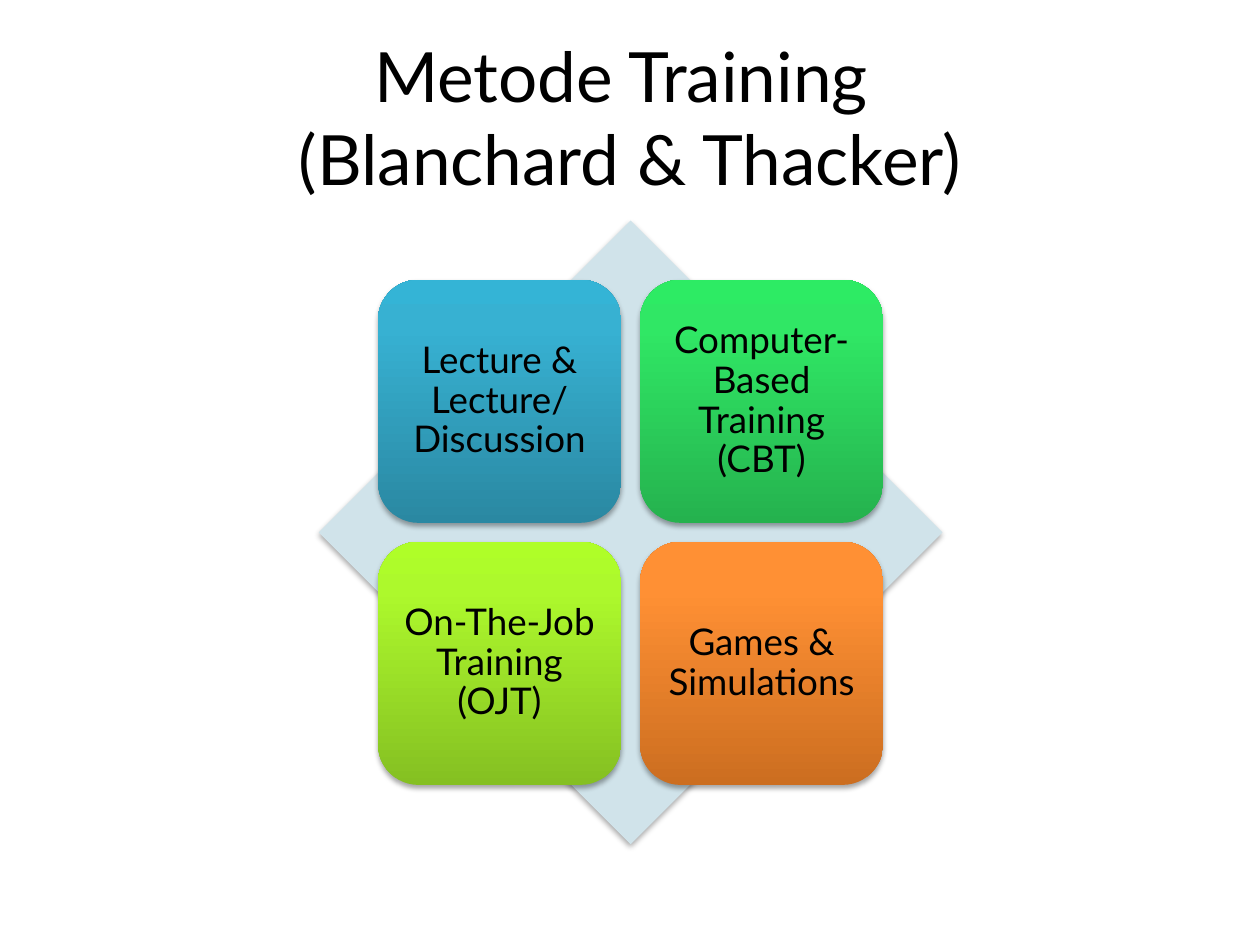
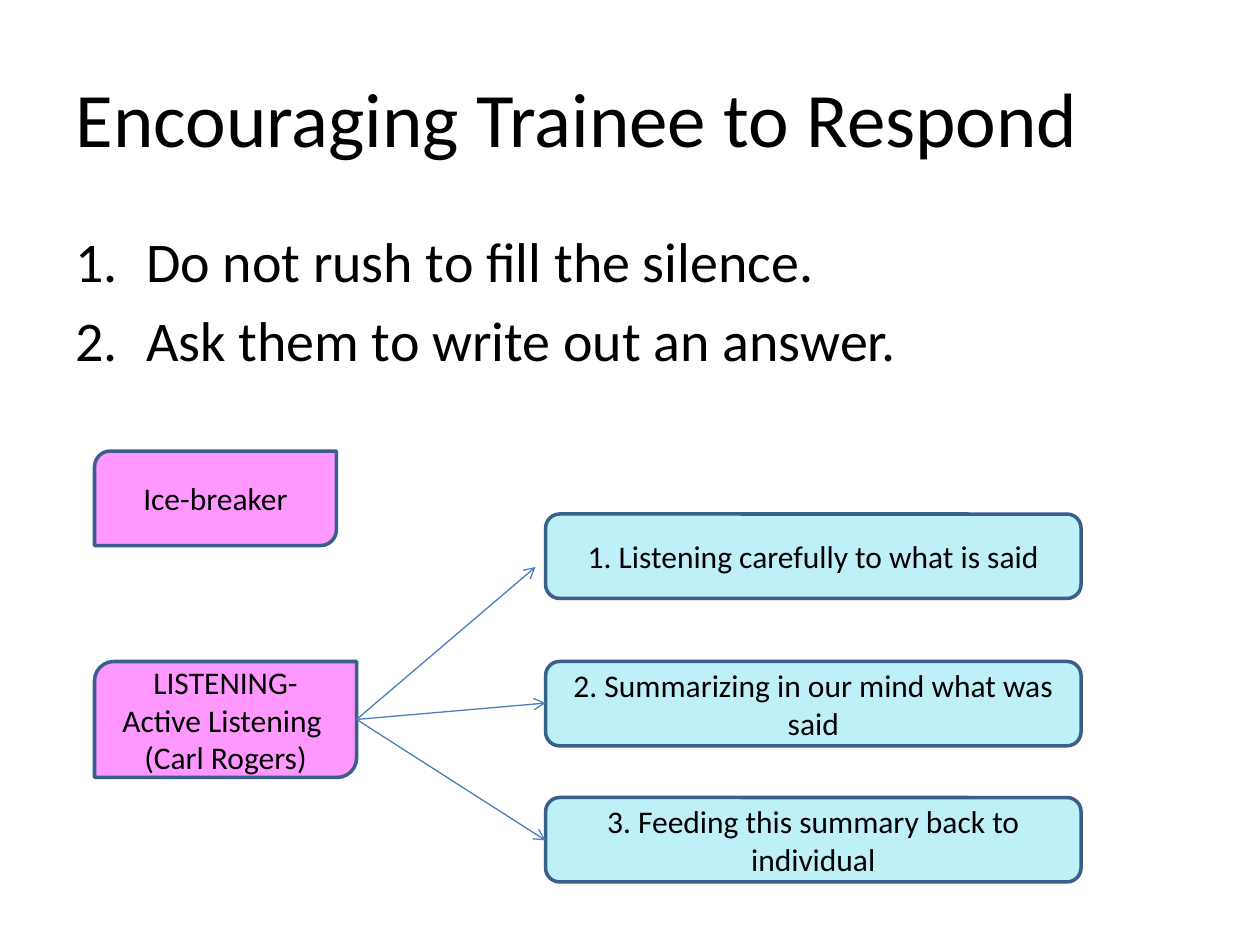
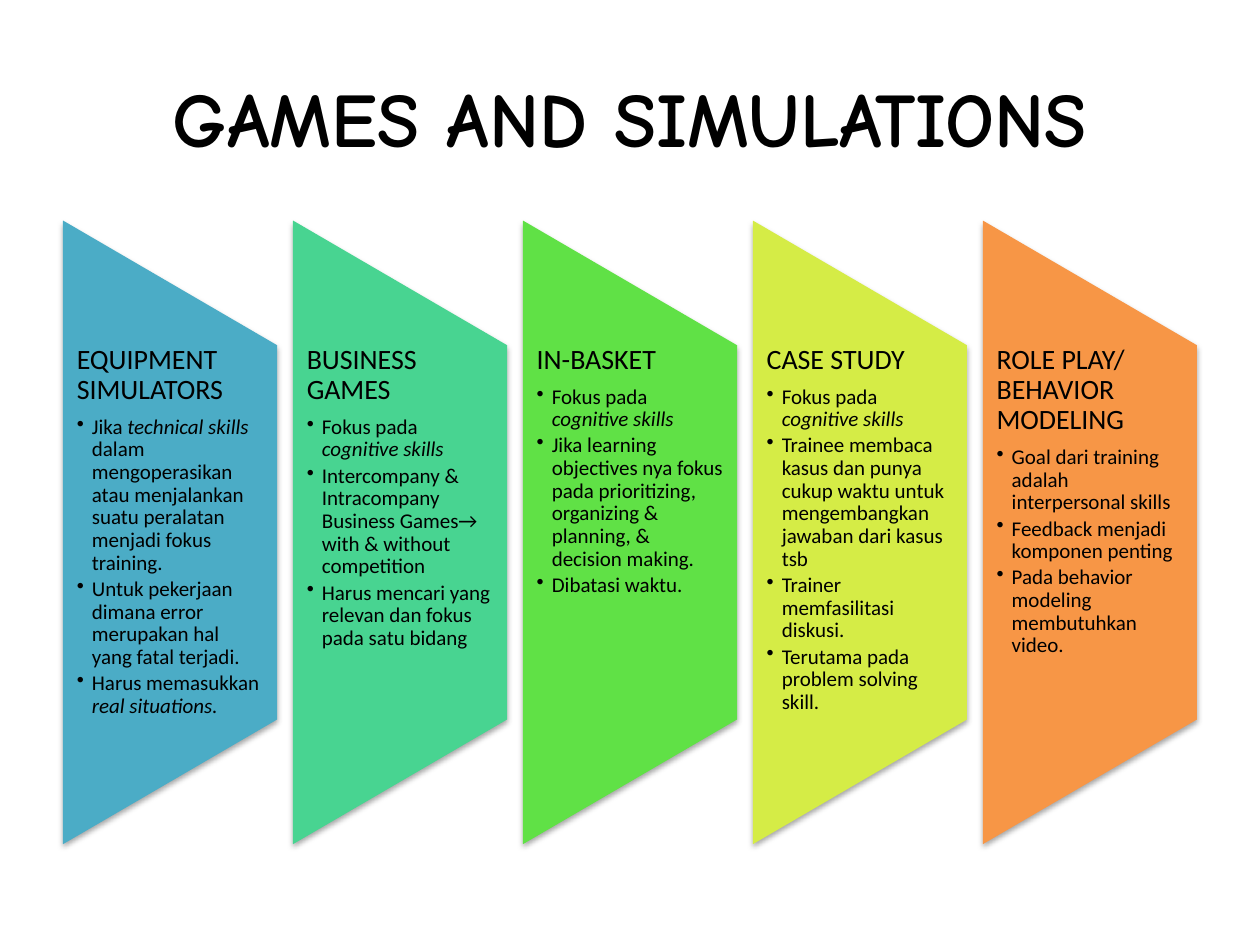
import pptx
import pptx.dml.color
import pptx.enum.shapes
import pptx.enum.text
import pptx.oxml
import pptx.oxml.ns
import pptx.util
from copy import deepcopy

Inches = pptx.util.Inches
Pt = pptx.util.Pt
RGBColor = pptx.dml.color.RGBColor
SHAPE = pptx.enum.shapes.MSO_SHAPE
ALIGN = pptx.enum.text.PP_ALIGN
ANCHOR = pptx.enum.text.MSO_ANCHOR
qn = pptx.oxml.ns.qn
NS = pptx.oxml.ns.nsdecls("a")

BLACK = RGBColor(0, 0, 0)
PALE_BLUE = RGBColor(0xD0, 0xE3, 0xEA)
PINK = RGBColor(0xFE, 0x98, 0xFE)
AQUA = RGBColor(0xBF, 0xF0, 0xF7)
OUTLINE = RGBColor(0x3A, 0x5F, 0x8C)
ARROW = RGBColor(0x4B, 0x7E, 0xBC)

TITLE_BOX = (0.5, 0.3, 9, 1.25)
CONTENT_BOX = (0.5, 1.75, 9, 4.95)
TITLE_ONLY, TITLE_AND_BODY = 5, 1

METHODS = [
    ("Lecture & Lecture/ Discussion", ("2A88A2", "37B1D2", "34B4D6")),
    ("Computer-Based Training (CBT)", ("25B24E", "30E765", "2DEB64")),
    ("On-The-Job Training (OJT)", ("85C022", "ADF92C", "AFFE28")),
    ("Games & Simulations", ("CC6E20", "FF9034", "FF9136")),
]

PROMPTS = [
    ("Ice-breaker", (0.75, 3.58, 1.92, 0.75)),
    ("LISTENING- Active Listening \n(Carl Rogers)", (0.75, 5.25, 2.08, 0.92)),
]

LISTENING_STEPS = [
    ("1. Listening carefully to what is said", 4.08, (4.25, 4.5)),
    ("2. Summarizing in our mind what was said", 5.25, (4.33, 5.58)),
    ("3. Feeding this summary back to individual", 6.33, (4.33, 6.67)),
]

# Underscores enclose italic words.
GAMES = [
    ("EQUIPMENT SIMULATORS", RGBColor(0x4B, 0xAC, 0xC6), [
        "Jika _technical skills _dalam mengoperasikan atau menjalankan suatu peralatan menjadi fokus training.",
        "Untuk pekerjaan dimana error merupakan hal yang fatal terjadi.",
        "Harus memasukkan _real situations._",
    ]),
    ("BUSINESS GAMES", RGBColor(0x48, 0xD4, 0x91), [
        "Fokus pada _cognitive skills_",
        "Intercompany & Intracompany Business Games→ with & without competition",
        "Harus mencari yang relevan dan fokus pada satu bidang",
    ]),
    ("IN-BASKET", RGBColor(0x60, 0xE1, 0x46), [
        "Fokus pada _cognitive skills_",
        "Jika learning objectives nya fokus pada prioritizing, organizing & planning, & decision making.",
        "Dibatasi waktu.",
    ]),
    ("CASE STUDY", RGBColor(0xD5, 0xEC, 0x46), [
        "Fokus pada _cognitive skills_",
        "Trainee membaca kasus dan punya cukup waktu untuk mengembangkan jawaban dari kasus tsb",
        "Trainer memfasilitasi diskusi.",
        "Terutama pada problem solving skill.",
    ]),
    ("ROLE PLAY/ BEHAVIOR MODELING", RGBColor(0xF7, 0x96, 0x46), [
        "Goal dari training adalah interpersonal skills",
        "Feedback menjadi komponen penting",
        "Pada behavior modeling membutuhkan video.",
    ]),
]


def inches(box):
    return [Inches(length) for length in box]


def place(placeholder, box):
    placeholder.left, placeholder.top, placeholder.width, placeholder.height = inches(box)
    placeholder.text_frame.auto_size = pptx.enum.text.MSO_AUTO_SIZE.NONE


def format_runs(paragraph, size, font="Calibri", bold=None):
    for run in paragraph.runs:
        run.font.size = Pt(size)
        run.font.name = font
        run.font.bold = bold
        run.font.color.rgb = BLACK


def add_bullet(paragraph, indent, marker):
    properties = paragraph._p.get_or_add_pPr()
    properties.set("marL", str(Inches(indent)))
    properties.set("indent", str(-Inches(indent)))
    properties.append(pptx.oxml.parse_xml(marker))


def add_titled_slide(deck, layout, title, size=44, font="Calibri", align=ALIGN.CENTER, bold=None):
    slide = deck.slides.add_slide(deck.slide_layouts[layout])
    place(slide.shapes.title, TITLE_BOX)
    slide.shapes.title.text_frame.text = title
    heading = slide.shapes.title.text_frame.paragraphs[0]
    heading.alignment = align
    format_runs(heading, size, font, bold)
    return slide


def add_filled(slide, kind, box, color=None):
    shape = slide.shapes.add_shape(kind, *inches(box))
    shape.shadow.inherit = False
    shape.line.fill.background()
    if color is not None:
        shape.fill.solid()
        shape.fill.fore_color.rgb = color
    return shape


def add_soft_shadow(shape):
    shape._element.spPr.find(qn("a:effectLst")).append(pptx.oxml.parse_xml(
        f'<a:outerShdw {NS} blurRad="{Pt(3.1)}" dist="{Pt(1.8)}" dir="5400000" rotWithShape="0">'
        '<a:srgbClr val="000000"><a:alpha val="35000"/></a:srgbClr></a:outerShdw>'))


def fill_gradient(shape, colors):
    shape.fill.gradient()
    shape.fill.gradient_angle = 90
    stops = shape._element.spPr.find(qn("a:gradFill")).find(qn("a:gsLst"))
    stops.append(deepcopy(stops[-1]))
    for stop, position, color in zip(shape.fill.gradient_stops, (0, 0.8, 1), colors):
        stop.position = position
        stop.color.rgb = RGBColor.from_string(color)


def set_insets(frame, horizontal, vertical):
    frame.margin_left = frame.margin_right = Inches(horizontal)
    frame.margin_top = frame.margin_bottom = Inches(vertical)


def write_centred(shape, text, size, font="Calibri"):
    frame = shape.text_frame
    frame.word_wrap = True
    frame.vertical_anchor = ANCHOR.MIDDLE
    frame.text = text
    for paragraph in frame.paragraphs:
        paragraph.alignment = ALIGN.CENTER
        format_runs(paragraph, size, font)


def add_method_matrix(slide, box):
    left, top, width, height = box
    margin, gap = 0.47, 0.15
    tile = (width - 2 * margin - gap) / 2
    add_soft_shadow(add_filled(slide, SHAPE.DIAMOND, box, PALE_BLUE))
    for index, (method, colors) in enumerate(METHODS):
        row, column = divmod(index, 2)
        x = left + margin + column * (tile + gap)
        y = top + margin + row * (tile + gap)
        card = add_filled(slide, SHAPE.ROUNDED_RECTANGLE, (x, y, tile, tile))
        fill_gradient(card, colors)
        add_soft_shadow(card)
        set_insets(card.text_frame, 0.09, 0.09)
        write_centred(card, method, 21, "Lato")
        card.text_frame.paragraphs[0].line_spacing = 0.9


def add_numbered_body(slide, box, items):
    body = slide.placeholders[1]
    place(body, box)
    body.text_frame.text = "\n".join(items)
    for paragraph in body.text_frame.paragraphs:
        format_runs(paragraph, 32)
        add_bullet(paragraph, 0.56, f'<a:buAutoNum {NS} type="arabicPeriod"/>')


def add_outlined_box(slide, kind, box, color, text):
    shape = add_filled(slide, kind, box, color)
    shape.line.color.rgb = OUTLINE
    shape.line.width = Pt(2)
    write_centred(shape, text, 18)


def add_arrow(slide, start, end):
    arrow = slide.shapes.add_connector(
        pptx.enum.shapes.MSO_CONNECTOR.STRAIGHT, *inches(start + end))
    arrow.line.color.rgb = ARROW
    arrow.line.width = Pt(0.75)
    properties = arrow._element.spPr
    properties.find(qn("a:ln")).append(pptx.oxml.parse_xml(f'<a:tailEnd {NS} type="arrow"/>'))
    properties.append(pptx.oxml.parse_xml(f"<a:effectLst {NS}/>"))


def add_listening_diagram(slide):
    for prompt, box in PROMPTS:
        add_outlined_box(slide, SHAPE.ROUND_2_DIAG_RECTANGLE, box, PINK, prompt)
    left, top, width, height = PROMPTS[-1][1]
    for step, step_top, arrow_end in LISTENING_STEPS:
        add_outlined_box(slide, SHAPE.ROUNDED_RECTANGLE, (4.33, step_top, 4.25, 0.67), AQUA, step)
        add_arrow(slide, (left + width, top + height / 2), arrow_end)


def add_game_panel(slide, box, heading, color, points):
    left, top, width, height = box
    turned_box = (left + (width - height) / 2, top + (height - width) / 2, height, width)
    panel = add_filled(slide, SHAPE.FLOWCHART_MANUAL_OPERATION, turned_box, color)
    panel.rotation = 270
    add_soft_shadow(panel)

    frame = slide.shapes.add_textbox(
        *inches((left, top + height / 5, width, height * 3 / 5))).text_frame
    frame.word_wrap = True
    set_insets(frame, 0.11, 0)
    frame.text = heading
    title = frame.paragraphs[0]
    title.line_spacing = 0.9
    title.space_after = Pt(6)
    format_runs(title, 16)
    for point in points:
        paragraph = frame.add_paragraph()
        paragraph.line_spacing = 0.9
        paragraph.space_after = Pt(2)
        for index, part in enumerate(point.split("_")):
            if part:
                run = paragraph.add_run()
                run.text = part
                run.font.italic = index % 2 == 1
        format_runs(paragraph, 12)
        add_bullet(paragraph, 0.12, f'<a:buChar {NS} char="•"/>')


def add_game_panels(slide, box):
    left, top, width, height = box
    panel_width = 1.7
    pitch = (width - panel_width) / (len(GAMES) - 1)
    for index, game in enumerate(GAMES):
        add_game_panel(slide, (left + index * pitch, top, panel_width, height), *game)


def main():
    deck = pptx.Presentation()
    deck.slide_width, deck.slide_height = Inches(10), Inches(7.5)

    methods = add_titled_slide(
        deck, TITLE_ONLY, "Metode Training \v(Blanchard & Thacker)", 39.6, "Lato")
    add_method_matrix(methods, (2.53, 1.75, 4.95, 4.95))

    responding = add_titled_slide(
        deck, TITLE_AND_BODY, "Encouraging Trainee to Respond", align=ALIGN.LEFT)
    add_numbered_body(responding, CONTENT_BOX, [
        "Do not rush to fill the silence.", "Ask them to write out an answer."])
    add_listening_diagram(responding)

    games = add_titled_slide(
        deck, TITLE_ONLY, "GAMES AND SIMULATIONS", font="Comic Neue", bold=True)
    add_game_panels(games, CONTENT_BOX)

    deck.save("out.pptx")


if __name__ == "__main__":
    main()
